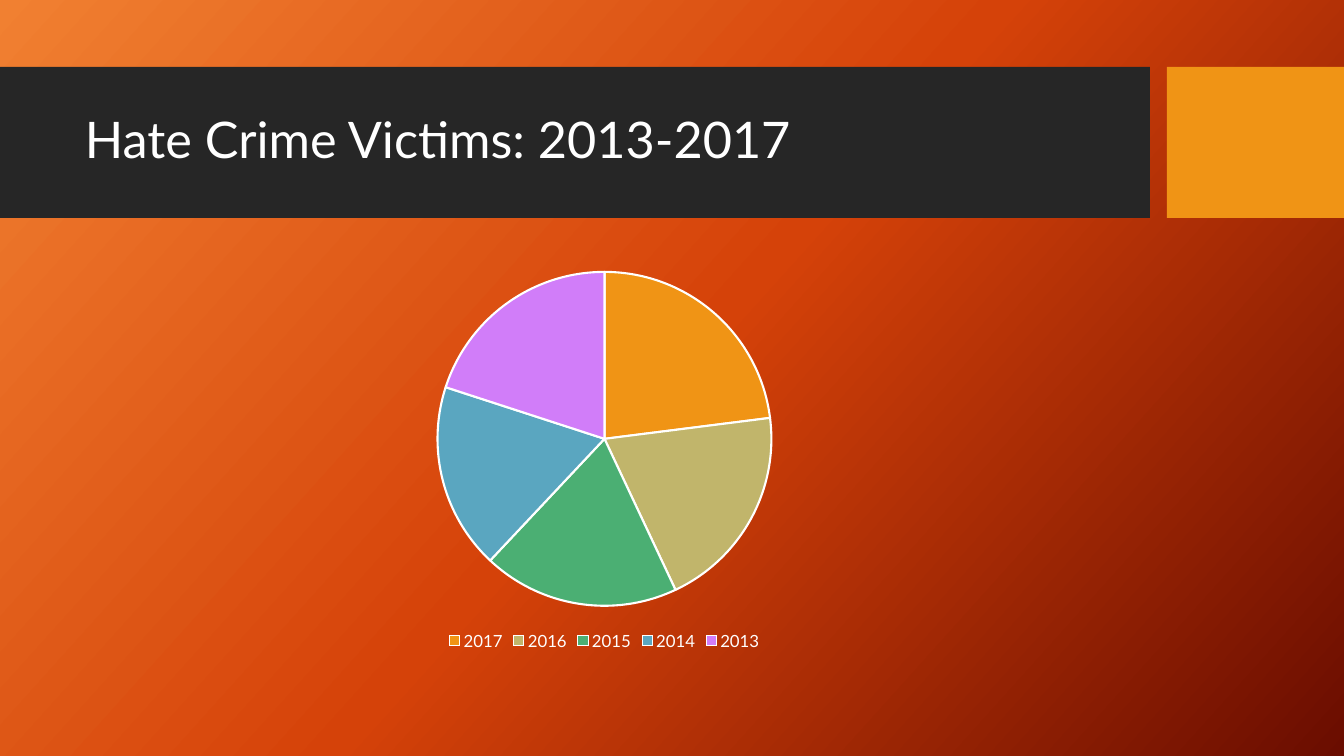
"""Build the slide on hate crime victims, 2013-2017."""
from copy import deepcopy
from typing import Any, NamedTuple

from pptx import Presentation
from pptx.chart.data import CategoryChartData
from pptx.dml.color import RGBColor
from pptx.enum.chart import XL_CHART_TYPE, XL_LEGEND_POSITION
from pptx.enum.shapes import MSO_SHAPE
from pptx.enum.text import MSO_ANCHOR
from pptx.oxml.ns import qn
from pptx.slide import Slide
from pptx.util import Emu, Pt

WIDTH, HEIGHT = 1344, 756
EMU_PER_PX = 12192000 / WIDTH
FONT = "Lato"
WHITE = RGBColor(0xFF, 0xFF, 0xFF)
CHARCOAL = RGBColor(0x26, 0x26, 0x26)
AMBER = RGBColor(0xF0, 0x94, 0x15)
SAND = RGBColor(0xC1, 0xB5, 0x6B)
GREEN = RGBColor(0x4B, 0xAF, 0x73)
BLUE = RGBColor(0x5A, 0xA6, 0xC0)
VIOLET = RGBColor(0xD1, 0x7D, 0xF9)
ORANGE = RGBColor(0xF1, 0x80, 0x31)
RUST = RGBColor(0xD5, 0x42, 0x09)
MAROON = RGBColor(0x6A, 0x0D, 0x00)


class Box(NamedTuple):
    left: int
    top: int
    width: int
    height: int

    def emu(self) -> list[Emu]:
        return [px(n) for n in self]


class Bar(NamedTuple):
    box: Box
    color: RGBColor


class Slice(NamedTuple):
    year: str
    share: int
    color: RGBColor


BARS = [
    Bar(Box(0, 67, 1150, 151), CHARCOAL),
    Bar(Box(1167, 67, 177, 151), AMBER),
]
TITLE_BOX = Box(75, 83, 1059, 119)
CHART_BOX = Box(75, 258, 1059, 397)
SLICES = [
    Slice("2017", 23, AMBER),
    Slice("2016", 20, SAND),
    Slice("2015", 19, GREEN),
    Slice("2014", 18, BLUE),
    Slice("2013", 20, VIOLET),
]


def px(n: int) -> Emu:
    return Emu(round(n * EMU_PER_PX))


def set_font(font: Any, size: int) -> None:
    for name, value in {"name": FONT, "size": Pt(size)}.items():
        setattr(font, name, value)
    font.color.rgb = WHITE


def paint_background(s: Slide) -> None:
    fill = s.background.fill
    fill.gradient()
    fill.gradient_angle = 318
    stops = s.element.find(".//" + qn("a:gsLst"))
    stops.insert(1, deepcopy(stops[0]))
    for stop, position, color in zip(fill.gradient_stops, (0, 0.5, 1), (ORANGE, RUST, MAROON)):
        stop.position = position
        stop.color.rgb = color


def add_bar(s: Slide, bar: Bar) -> None:
    sp = s.shapes.add_shape(MSO_SHAPE.RECTANGLE, *bar.box.emu())
    sp.shadow.inherit = False
    sp.fill.solid()
    sp.fill.fore_color.rgb = bar.color
    sp.line.fill.background()


def add_title(s: Slide, text: str) -> None:
    tf = s.shapes.add_textbox(*TITLE_BOX.emu()).text_frame
    for name, value in {"word_wrap": True, "vertical_anchor": MSO_ANCHOR.MIDDLE}.items():
        setattr(tf, name, value)
    p = tf.paragraphs[0]
    p.line_spacing = 0.9
    r = p.add_run()
    r.text = text
    set_font(r.font, 36)


def add_pie(s: Slide, slices: list[Slice]) -> None:
    data = CategoryChartData()
    data.categories = [sl.year for sl in slices]
    data.add_series("Series 1", [sl.share for sl in slices])
    chart = s.shapes.add_chart(XL_CHART_TYPE.PIE, *CHART_BOX.emu(), data).chart
    for name, value in {"has_title": False, "has_legend": True}.items():
        setattr(chart, name, value)
    set_font(chart.font, 10)
    legend = chart.legend
    legend.position = XL_LEGEND_POSITION.BOTTOM
    legend.include_in_layout = False
    set_font(legend.font, 12)
    plot = chart.plots[0]
    plot.vary_by_categories = True
    for i, sl in enumerate(slices):
        fmt = plot.series[0].points[i].format
        fmt.fill.solid()
        fmt.fill.fore_color.rgb = sl.color
        fmt.line.color.rgb = WHITE
        fmt.line.width = Pt(1.5)


def main() -> None:
    prs = Presentation()
    prs.slide_width, prs.slide_height = px(WIDTH), px(HEIGHT)
    s = prs.slides.add_slide(prs.slide_layouts[6])
    paint_background(s)
    for bar in BARS:
        add_bar(s, bar)
    add_title(s, "Hate Crime Victims: 2013-2017")
    add_pie(s, SLICES)
    prs.save("out.pptx")


if __name__ == "__main__":
    main()
